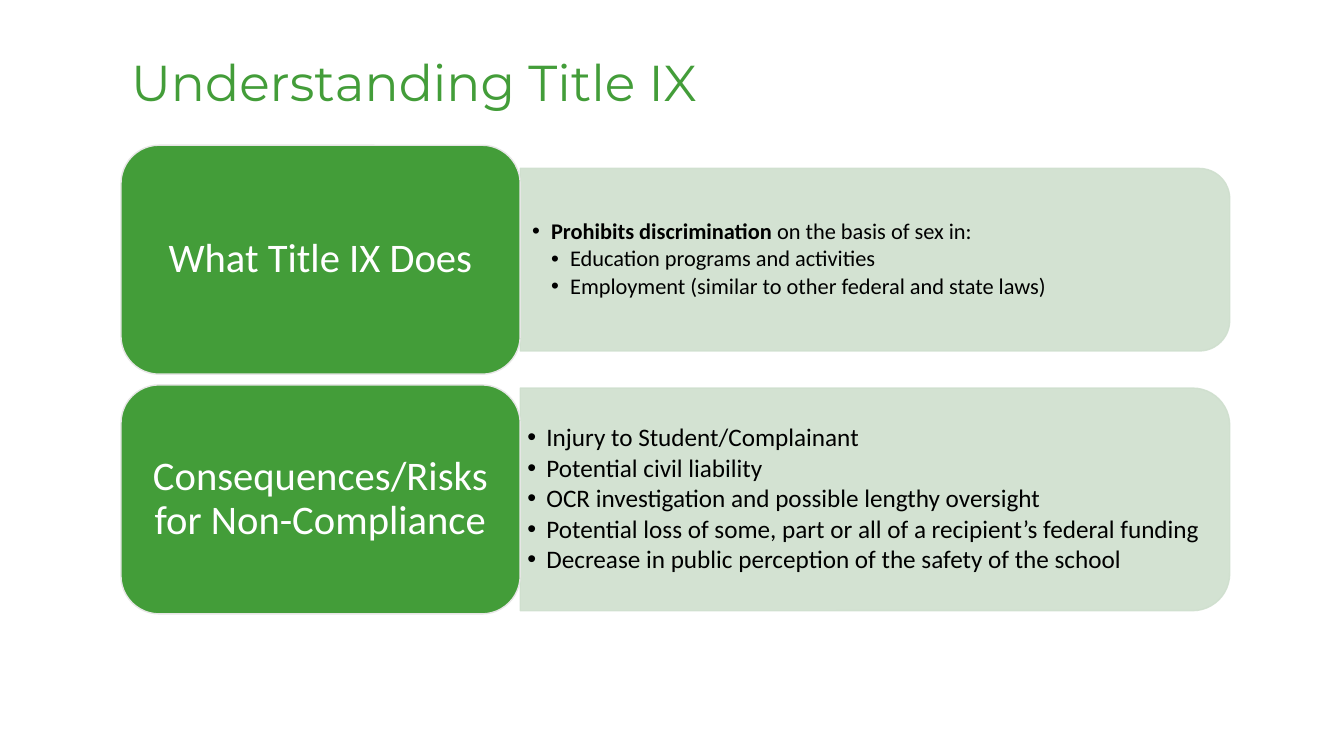
import lxml.etree
import pptx
import pptx.dml.color
import pptx.enum.shapes
import pptx.enum.text
import pptx.oxml.ns
import pptx.util

Cm, Pt = pptx.util.Cm, pptx.util.Pt
RGBColor = pptx.dml.color.RGBColor
SHAPE = pptx.enum.shapes.MSO_SHAPE
ALIGN = pptx.enum.text.PP_ALIGN
MIDDLE = pptx.enum.text.MSO_ANCHOR.MIDDLE
qn = pptx.oxml.ns.qn

GREEN = RGBColor(0x43, 0x9D, 0x39)
PALE = RGBColor(0xCF, 0xDF, 0xCE)
GREY = RGBColor(0xE7, 0xE6, 0xE6)
WHITE = RGBColor(0xFF, 0xFF, 0xFF)
BLACK = RGBColor(0, 0, 0)

LEFT, TOP = 3.05, 3.66
LABEL_WIDTH, PANEL_WIDTH = 10.06, 17.88
ROW_HEIGHT, ROW_STEP = 5.77, 6.04
INDENT = 0.48

# Label, panel height, text size, side inset, points as (level, bold part, rest)
ROWS = [
    ("What Title IX Does", 4.6, 16, 0.3, [
        (1, "Prohibits discrimination ", "on the basis of sex in:"),
        (2, "", "Education programs and activities"),
        (2, "", "Employment (similar to other federal and state laws)"),
    ]),
    ("Consequences/Risks for Non-Compliance", 5.61, 18, 0.18, [
        (1, "", "Injury to Student/Complainant"),
        (1, "", "Potential civil liability"),
        (1, "", "OCR investigation and possible lengthy oversight"),
        (1, "", "Potential loss of some, part or all of a recipient’s federal funding"),
        (1, "", "Decrease in public perception of the safety of the school"),
    ]),
]


def set_font(para, name, size, color):
    para.line_spacing = 0.9
    para.font.name = name
    para.font.size = Pt(size)
    para.font.color.rgb = color


def set_frame(frame, side, edge):
    frame.word_wrap = True
    frame.vertical_anchor = MIDDLE
    frame.margin_left = frame.margin_right = Cm(side)
    frame.margin_top = frame.margin_bottom = Cm(edge)


def paint(shape, fill, line):
    shape.shadow.inherit = False
    shape.fill.solid()
    shape.fill.fore_color.rgb = fill
    shape.line.color.rgb = line
    shape.line.width = Pt(1)


def add_title(slide, text, left, top, width, height):
    title = slide.shapes.title
    title.left, title.top = Cm(left), Cm(top)
    title.width, title.height = Cm(width), Cm(height)
    title.text_frame.text = text
    title.text_frame.vertical_anchor = MIDDLE
    para = title.text_frame.paragraphs[0]
    para.alignment = ALIGN.LEFT
    set_font(para, "Montserrat", 36, GREEN)


def add_panel(slide, left, mid, width, height):
    """Turn a shape with two round top corners so that they face right."""
    panel = slide.shapes.add_shape(
        SHAPE.ROUND_2_SAME_RECTANGLE,
        Cm(left + (width - height) / 2), Cm(mid - width / 2),
        Cm(height), Cm(width))
    panel.rotation = 90
    paint(panel, PALE, PALE)
    for color in panel.element.spPr.iter(qn("a:srgbClr")):
        lxml.etree.SubElement(color, qn("a:alpha"), val="90000")


def add_bullet(para, level):
    para.level = level
    props = para._p.get_or_add_pPr()
    props.set("marL", str(Cm(INDENT * level)))
    props.set("indent", str(-Cm(INDENT)))
    lxml.etree.SubElement(props, qn("a:buFont"), typeface="Arial")
    lxml.etree.SubElement(props, qn("a:buChar"), char="•")


def add_points(slide, points, size, side, left, top, width, height):
    box = slide.shapes.add_textbox(Cm(left), Cm(top), Cm(width), Cm(height))
    frame = box.text_frame
    set_frame(frame, side, side / 2)
    for index, (level, strong, rest) in enumerate(points):
        para = frame.add_paragraph() if index else frame.paragraphs[0]
        add_bullet(para, level)
        para.space_after = Pt(round(size * 0.13, 1))
        set_font(para, "Calibri", size, BLACK)
        if strong:
            run = para.add_run()
            run.text = strong
            run.font.bold = True
        para.add_run().text = rest


def add_label(slide, text, left, top, width, height):
    label = slide.shapes.add_shape(
        SHAPE.ROUNDED_RECTANGLE, Cm(left), Cm(top), Cm(width), Cm(height))
    paint(label, GREEN, GREY)
    set_frame(label.text_frame, 0.3, 0.15)
    label.text_frame.text = text
    para = label.text_frame.paragraphs[0]
    para.alignment = ALIGN.CENTER
    set_font(para, "Calibri", 29, WHITE)


def add_row(slide, row, left, top):
    text, tall, size, side, points = row
    mid = top + ROW_HEIGHT / 2
    split = left + LABEL_WIDTH
    add_panel(slide, split, mid, PANEL_WIDTH, tall)
    add_points(slide, points, size, side,
               split, mid - tall / 2, PANEL_WIDTH - 0.25, tall)
    add_label(slide, text, left, top, LABEL_WIDTH, ROW_HEIGHT)


def main():
    deck = pptx.Presentation()
    deck.slide_width, deck.slide_height = Cm(33.87), Cm(19.05)
    slide = deck.slides.add_slide(deck.slide_layouts[5])
    add_title(slide, "Understanding Title IX", LEFT, 0.79, 27.94, 2.69)
    for index, row in enumerate(ROWS):
        add_row(slide, row, LEFT, TOP + index * ROW_STEP)
    deck.save("out.pptx")


if __name__ == "__main__":
    main()
